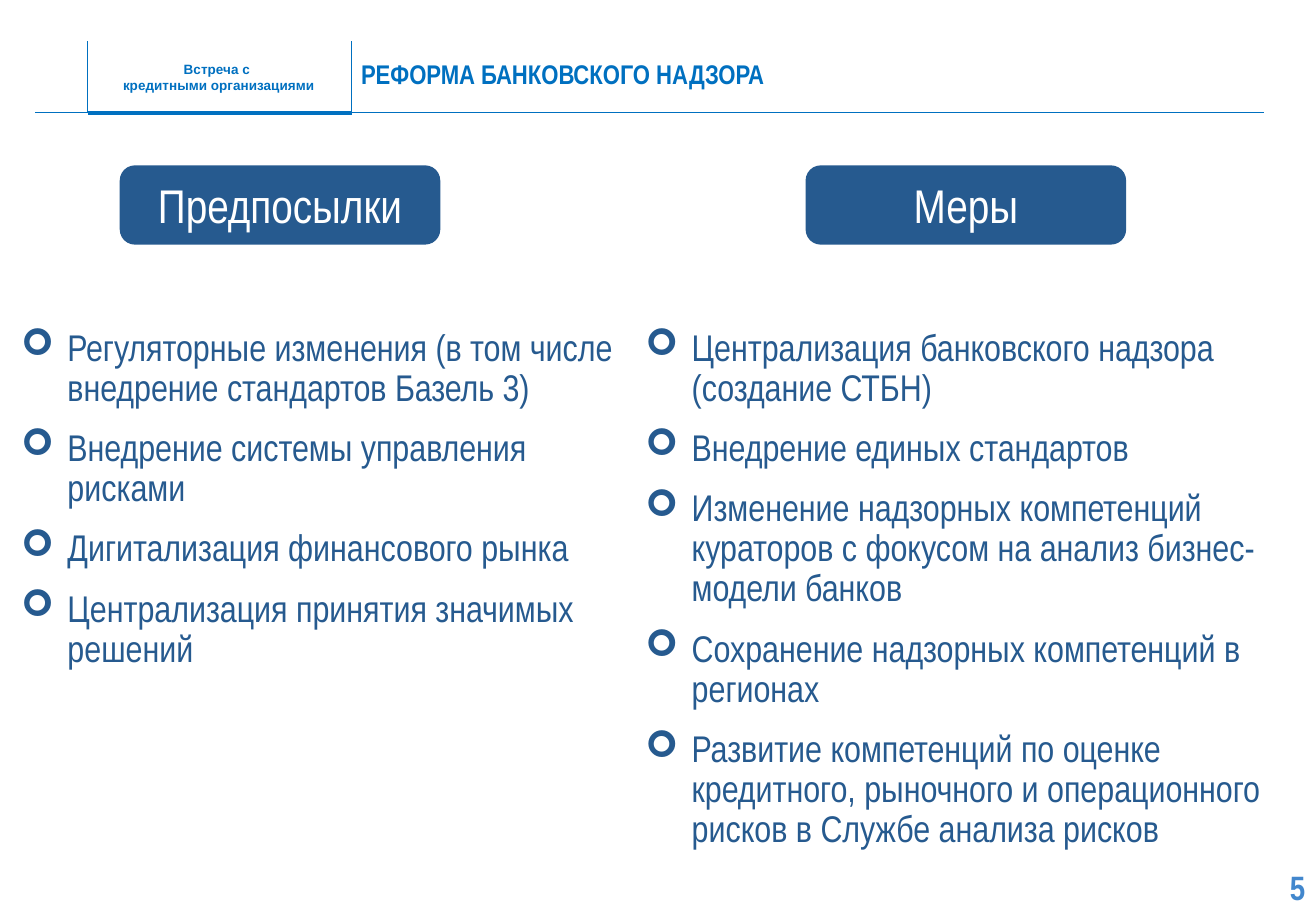
"""Builds the slide on the banking supervision reform: its causes and measures."""
from lxml import etree
from pptx import Presentation
from pptx import util as u
from pptx.dml.color import RGBColor
from pptx.enum import shapes, text
from pptx.oxml import ns

BRIGHT_BLUE = "0070C0"
DARK_BLUE = "265A8F"


def colour(hex_string):
    return RGBColor.from_string(hex_string)


def write(shape, lines, size, hex_string, font="Arial Narrow", bold=False, align="LEFT",
          anchor="MIDDLE", wrap=True, spacing=1.0, after=0, bullet=None, indent=27.5):
    frame = shape.text_frame
    frame.auto_size = text.MSO_AUTO_SIZE.NONE
    frame.word_wrap = wrap
    frame.vertical_anchor = text.MSO_ANCHOR[anchor]
    frame.margin_left = frame.margin_right = frame.margin_top = frame.margin_bottom = 0
    frame.text = "\n".join(lines)
    for paragraph in frame.paragraphs:
        paragraph.alignment = text.PP_ALIGN[align]
        paragraph.line_spacing = spacing
        paragraph.space_before = u.Pt(0)
        paragraph.space_after = u.Pt(after)
        for run in paragraph.runs:
            run.font.name = font
            run.font.size = u.Pt(size)
            run.font.bold = bold
            run.font.color.rgb = colour(hex_string)
        if bullet:
            properties = paragraph._p.get_or_add_pPr()
            properties.set("marL", str(u.Pt(indent)))
            properties.set("indent", str(-u.Pt(indent)))
            etree.SubElement(properties, ns.qn("a:buFont")).set("typeface", "Wingdings")
            etree.SubElement(properties, ns.qn("a:buChar")).set("char", bullet)


presentation = Presentation()
presentation.slide_width = u.Pt(780)
presentation.slide_height = u.Pt(540)
slide = presentation.slides.add_slide(presentation.slide_layouts.get_by_name("Two Content"))
title, causes, measures = slide.placeholders

header_lines = [
    (21, 66.25, 52, 66.25, 0.25),
    (52, 67, 208.5, 67, 2.25),
    (207.5, 66.25, 749, 66.25, 0.25),
    (52, 24.5, 52, 67, 0.25),
    (208.25, 24.5, 208.25, 67, 0.25),
]
for *ends, width in header_lines:
    line = slide.shapes.add_connector(shapes.MSO_CONNECTOR.STRAIGHT, *map(u.Pt, ends))
    line.line.color.rgb = colour(BRIGHT_BLUE)
    line.line.width = u.Pt(width)
    etree.SubElement(line._element.spPr, ns.qn("a:effectLst"))

meeting = slide.shapes.add_textbox(u.Pt(53.25), u.Pt(36), u.Pt(152.75), u.Pt(19.5))
write(meeting, ["Встреча с \vкредитными организациями"], 8, BRIGHT_BLUE,
      font="Arial", bold=True, align="CENTER")

title.left, title.top, title.width, title.height = map(u.Pt, (214, 24.5, 529, 41))
write(title, ["РЕФОРМА БАНКОВСКОГО НАДЗОРА"], 16, BRIGHT_BLUE, bold=True, spacing=0.9)

for left, heading in [(71.5, "Предпосылки"), (478, "Меры")]:
    label = slide.shapes.add_shape(shapes.MSO_SHAPE.ROUNDED_RECTANGLE,
                                   u.Pt(left), u.Pt(98.5), u.Pt(189), u.Pt(46))
    label.adjustments[0] = 0.185
    label.shadow.inherit = False
    label.fill.solid()
    label.fill.fore_color.rgb = colour(DARK_BLUE)
    label.line.color.rgb = colour(DARK_BLUE)
    label.line.width = u.Pt(1)
    write(label, [heading], 28, "FFFFFF", align="CENTER", after=3)

columns = [
    (causes, 12.5, 354, 302, [
        "Регуляторные изменения (в том числе внедрение стандартов Базель 3)",
        "Внедрение системы управления рисками",
        "Дигитализация финансового рынка",
        "Централизация принятия значимых решений",
    ]),
    (measures, 382.5, 381.5, 316, [
        "Централизация банковского надзора (создание СТБН)",
        "Внедрение единых стандартов",
        "Изменение надзорных компетенций кураторов с фокусом на анализ бизнес-модели банков",
        "Сохранение надзорных компетенций в регионах",
        "Развитие компетенций по оценке кредитного, рыночного и операционного рисков "
        "в Службе анализа рисков",
    ]),
]
for column, left, width, height, items in columns:
    column.left, column.top, column.width, column.height = map(u.Pt, (left, 195, width, height))
    write(column, items, 22, DARK_BLUE, anchor="TOP", spacing=0.9, after=12, bullet="➢")

page_number = slide.shapes.add_textbox(u.Pt(764.5), u.Pt(511), u.Pt(15.5), u.Pt(29))
write(page_number, ["5"], 20, "4287CD", bold=True, wrap=False)

presentation.save("out.pptx")
